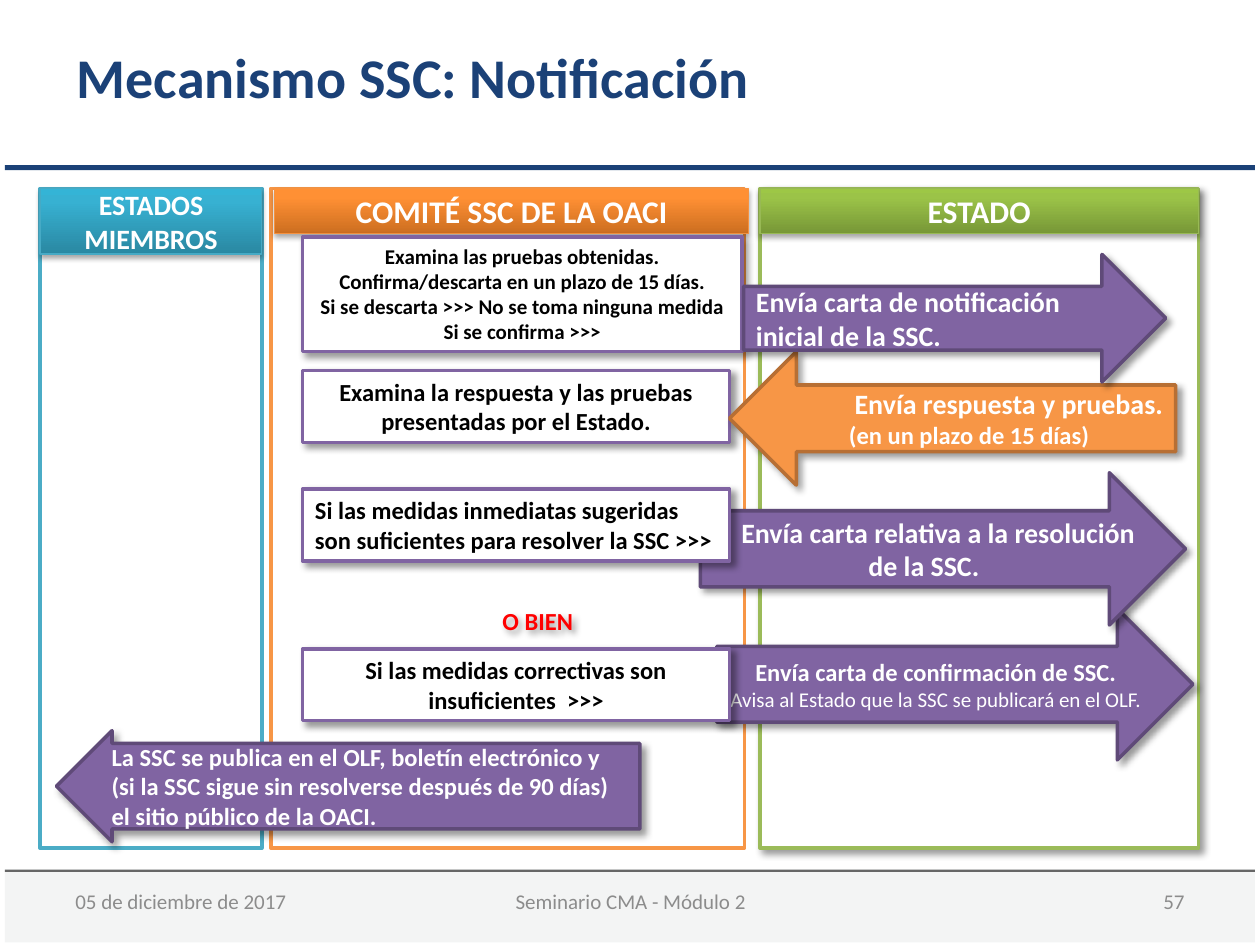
from copy import deepcopy

from lxml.etree import SubElement
from pptx import Presentation
from pptx.dml.color import RGBColor
from pptx.enum.shapes import MSO_SHAPE as Preset
from pptx.enum.text import MSO_ANCHOR as Anchor, PP_ALIGN as Align
from pptx.oxml.ns import qn
from pptx.util import Cm, Pt

COLORS = {
    "navy": "1B4177", "white": "FFFFFF", "black": "000000", "red": "FF0000",
    "footer": "F3F4F4", "rule": "666666", "muted": "8C8C8C",
    "purple": "8064A2", "dark purple": "5F4A78",
    "orange": "F79646", "dark orange": "B76F34",
    "green": "9BBB59", "green edge": "98B955", "orange edge": "F69240",
    "blue": "4BACC6", "blue edge": "46AAC5",
}
GRADIENTS = {
    "green": ("779737", "9BC348", "9DC746"),
    "orange": ("CC6E20", "FF9034", "FF9136"),
    "blue": ("2A88A2", "37B1D2", "34B4D6"),
}
SOFT = {"alpha": 40, "blur": 4, "distance": 3, "angle": 45}
HEADER = {"alpha": 35, "blur": 3.1, "distance": 1.8, "angle": 90}
LEFT, CENTER, RIGHT = Align.LEFT, Align.CENTER, Align.RIGHT
TOP, MIDDLE = Anchor.TOP, Anchor.MIDDLE

presentation = Presentation()
presentation.slide_width = Cm(25.4)
presentation.slide_height = Cm(19.05)
slide = presentation.slides.add_slide(presentation.slide_layouts[6])
shadows = []


def add_block(preset, bounds, fill, line=None, line_width=2, shadow=None):
    shape = slide.shapes.add_shape(preset, *map(Cm, bounds))
    shape.shadow.inherit = False
    shape.fill.solid()
    shape.fill.fore_color.rgb = RGBColor.from_string(COLORS[fill])
    if line:
        shape.line.color.rgb = RGBColor.from_string(COLORS[line])
        shape.line.width = Pt(line_width)
    else:
        shape.line.fill.background()
    if shadow:
        shadows.append((shape, shadow))
    return shape


def write(shape, lines, color, anchor=MIDDLE, wrap=True):
    frame = shape.text_frame
    frame.word_wrap = wrap
    frame.vertical_anchor = anchor
    for index, (text, size, bold, alignment) in enumerate(lines):
        paragraph = frame.add_paragraph() if index else frame.paragraphs[0]
        paragraph.alignment = alignment
        run = paragraph.add_run()
        run.text = text
        for name, value in {"name": "Calibri", "size": Pt(size), "bold": bold}.items():
            setattr(run.font, name, value)
        run.font.color.rgb = RGBColor.from_string(COLORS[color])


for top, height, color in [(17.53, 1.47, "footer"), (17.53, 0.05, "rule"), (3.33, 0.1, "navy")]:
    add_block(Preset.RECTANGLE, (0.1, top, 25.2, height), color)

title = slide.shapes.add_textbox(Cm(1.3), Cm(0.74), Cm(19), Cm(1.63))
write(title, [("Mecanismo SSC: Notificación", 32, True, LEFT)], "navy", TOP)

columns = [
    ("ESTADO", "green", 15.32, 15.32, 8.84, 0.91, 18, SOFT),
    ("COMITÉ SSC DE LA OACI", "orange", 5.46, 5.54, 9.55, 0.91, 18, None),
    ("ESTADOS MIEMBROS", "blue", 0.81, 0.81, 4.47, 1.32, 16, None),
]
for name, color, left, header_left, width, header_height, size, shadow in columns:
    add_block(Preset.RECTANGLE, (left, 3.8, width, 13.3), "white", color, 2, shadow)
    header = add_block(Preset.RECTANGLE, (header_left, 3.8, width, header_height),
                       "white", f"{color} edge", 0.75, HEADER)
    header.fill.gradient()
    header.fill.gradient_angle = 90
    stop_list = header._element.spPr.find(".//" + qn("a:gsLst"))
    stop_list.append(deepcopy(stop_list[-1]))
    for stop, position, shade in zip(header.fill.gradient_stops, (0, 0.8, 1), GRADIENTS[color]):
        stop.position = position
        stop.color.rgb = RGBColor.from_string(shade)
    if size == 16:
        header.text_frame.margin_left = header.text_frame.margin_right = Cm(0.1)
    write(header, [(name, size, True, CENTER)], "white")

steps = [
    ("box", (6.1, 7.47, 8.61, 1.45), TOP,
     [("Examina la respuesta y las pruebas presentadas por el Estado.", 14, True, CENTER)]),
    ("reply", (14.71, 7.09, 8.99, 2.69), MIDDLE,
     [("Envía respuesta y pruebas.", 16, True, RIGHT),
      ("(en un plazo de 15 días)", 14, True, CENTER)]),
    ("send", (14.45, 12.27, 9.6, 3.05), MIDDLE,
     [("Envía carta de confirmación de SSC.", 14, True, CENTER),
      ("Avisa al Estado que la SSC se publicará en el OLF.", 12, False, CENTER)]),
    ("send", (14.12, 9.53, 9.78, 3.07), MIDDLE,
     [("Envía carta relativa a la resolución", 16, True, RIGHT),
      ("de la SSC.", 16, True, CENTER)]),
    ("box", (6.1, 9.86, 8.61, 1.45), TOP,
     [("Si las medidas inmediatas sugeridas son suficientes para resolver la SSC >>>",
       14, True, LEFT)]),
    ("box", (6.1, 13.08, 8.61, 1.45), MIDDLE,
     [("Si las medidas correctivas son insuficientes  >>>", 14, True, CENTER)]),
    ("publish", (1.14, 14.73, 11.76, 2.24), MIDDLE,
     [("La SSC se publica en el OLF, boletín electrónico y (si la SSC sigue sin "
       "resolverse después de 90 días) el sitio público de la OACI.", 14, True, LEFT)]),
    ("box", (6.1, 4.78, 8.86, 2.31), TOP,
     [(text, 12, True, CENTER) for text in (
         "Examina las pruebas obtenidas.",
         "Confirma/descarta en un plazo de 15 días.",
         "Si se descarta >>> No se toma ninguna medida",
         "Si se confirma >>>")]),
    ("send", (14.99, 5.13, 8.51, 2.57), MIDDLE,
     [("Envía carta de notificación inicial de la SSC.", 16, True, LEFT)]),
]
styles = {
    "box": (Preset.RECTANGLE, "white", "purple", "black"),
    "send": (Preset.RIGHT_ARROW, "purple", "dark purple", "white"),
    "publish": (Preset.RIGHT_ARROW, "purple", "dark purple", "white"),
    "reply": (Preset.RIGHT_ARROW, "orange", "dark orange", "white"),
}
for kind, bounds, anchor, lines in steps:
    preset, fill, line, text_color = styles[kind]
    step = add_block(preset, bounds, fill, line, 2, SOFT)
    if kind in ("reply", "publish"):
        step._element.spPr.find(qn("a:xfrm")).set("flipH", "1")
    if kind == "publish":
        step.adjustments[0] = 0.77
    write(step, lines, text_color, anchor)

alternative = slide.shapes.add_textbox(Cm(9.88), Cm(12.09), Cm(1.96), Cm(0.86))
alternative.shadow.inherit = False
shadows.append((alternative, SOFT))
write(alternative, [("O BIEN", 14, True, LEFT)], "red", TOP, False)

footers = [
    ("05 de diciembre de 2017", 1.27, 5.92, LEFT),
    ("Seminario CMA - Módulo 2", 8.69, 8.05, CENTER),
    ("57", 18.21, 5.92, RIGHT),
]
for text, left, width, alignment in footers:
    footer = slide.shapes.add_textbox(Cm(left), Cm(17.65), Cm(width), Cm(1.02))
    write(footer, [(text, 12, False, alignment)], "muted")

for shape, shadow in shadows:
    effects = shape._element.spPr.find(qn("a:effectLst"))
    outer = SubElement(effects, qn("a:outerShdw"), {
        "blurRad": str(Pt(shadow["blur"])), "dist": str(Pt(shadow["distance"])),
        "dir": str(shadow["angle"] * 60000), "algn": "tl", "rotWithShape": "0"})
    color = SubElement(outer, qn("a:srgbClr"), val=COLORS["black"])
    SubElement(color, qn("a:alpha"), val=str(shadow["alpha"] * 1000))

presentation.save("out.pptx")
